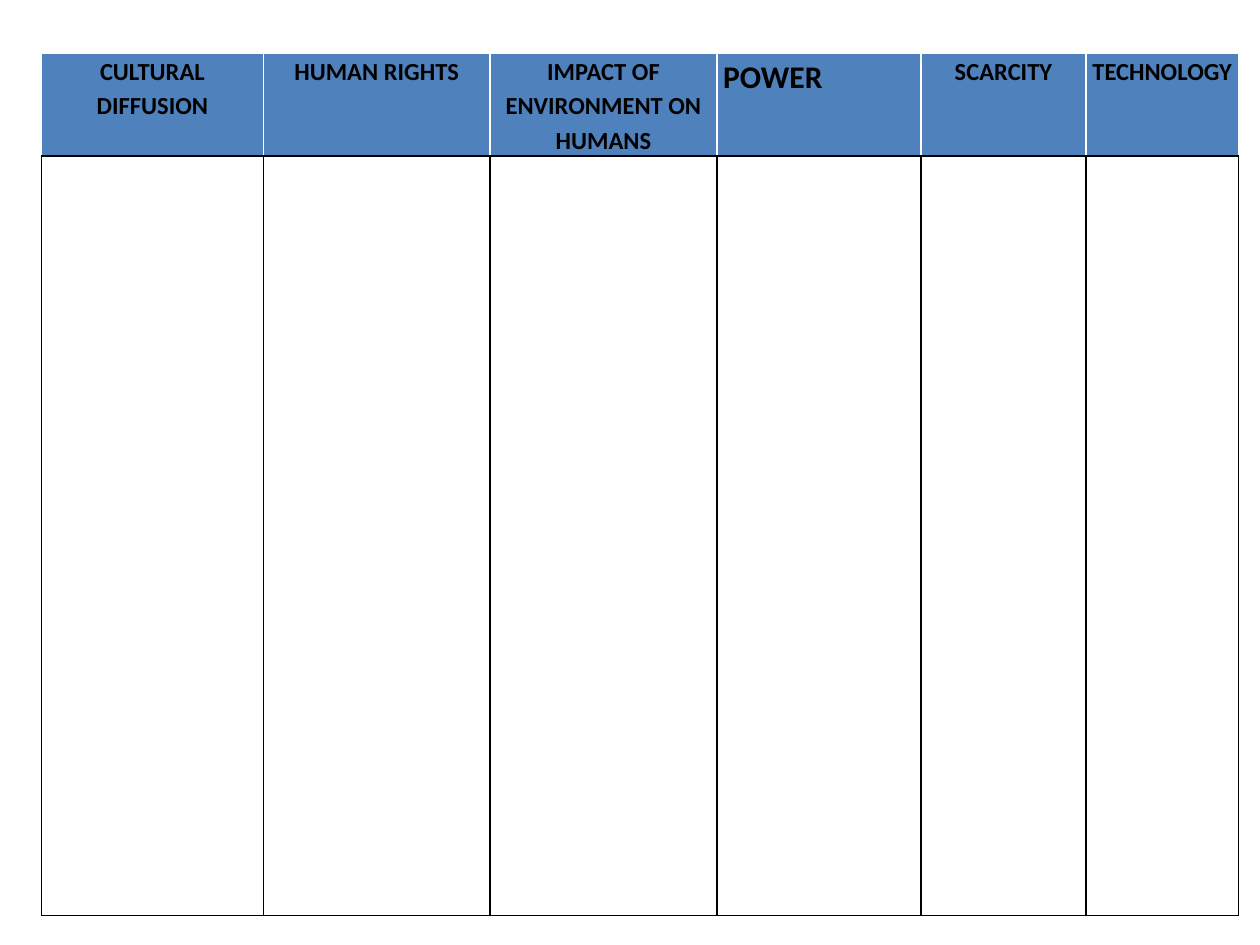
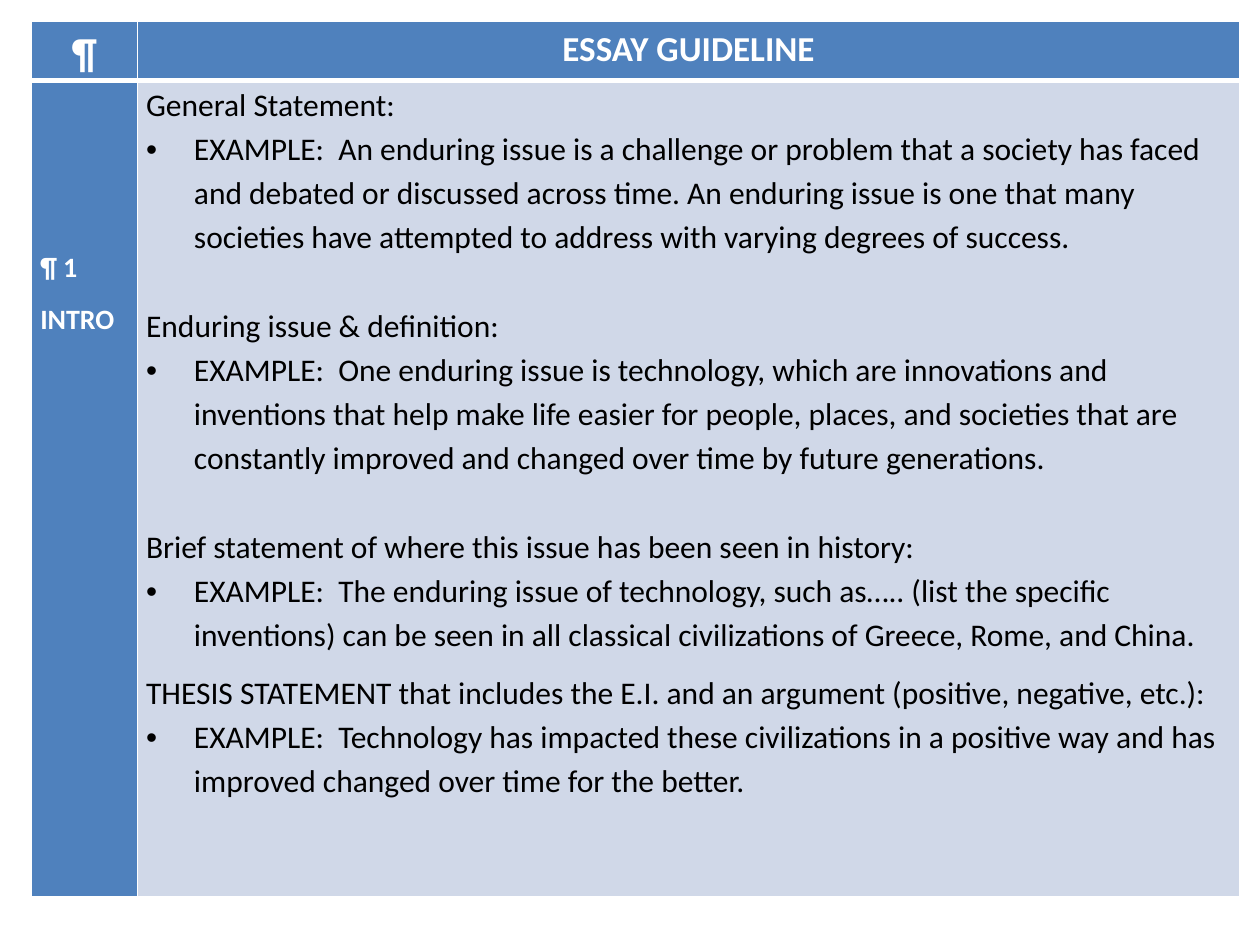
"""Builds two slides: an enduring-issues chart and an essay guideline."""
import pptx
import pptx.dml.color
import pptx.enum.text
import pptx.oxml.ns
import pptx.util
from lxml import etree

Inches = pptx.util.Inches
Pt = pptx.util.Pt
CENTER = pptx.enum.text.PP_ALIGN.CENTER

BLUE, PALE, WHITE, BLACK = "4F81BD", "D0D8E8", "FFFFFF", "000000"
FONT = "Calibri"
BULLET_INDENT = 0.38
SECTION_GAP = 25.3
INTRO_TOP = 1.22

ISSUES = ["CULTURAL DIFFUSION", "HUMAN RIGHTS", "IMPACT OF ENVIRONMENT ON HUMANS",
          "POWER", "SCARCITY", "TECHNOLOGY"]

INTRO_STEPS = [
    ("General Statement:",
     "An enduring issue is a challenge or problem that a society has faced and debated or "
     "discussed across time. An enduring issue is one that many societies have attempted to "
     "address with varying degrees of success."),
    ("Enduring issue & definition:",
     "One enduring issue is technology, which are innovations and inventions that help make "
     "life easier for people, places, and societies that are constantly improved and changed "
     "over time by future generations."),
    ("Brief statement of where this issue has been seen in history:",
     "The enduring issue of technology, such as….. (list the specific inventions) can be seen "
     "in all classical civilizations of Greece, Rome, and China."),
    ("THESIS STATEMENT that includes the E.I. and an argument (positive, negative, etc.):",
     "Technology has impacted these civilizations in a positive way and has improved changed "
     "over time for the better."),
]


def rgb(value):
    return pptx.dml.color.RGBColor.from_string(value)


class Deck:
    def __init__(self):
        self.prs = pptx.Presentation()
        self.prs.slide_width = Inches(10)
        self.prs.slide_height = Inches(7.5)
        self.slide = None

    def new_slide(self):
        self.slide = self.prs.slides.add_slide(self.prs.slide_layouts[6])

    def table(self, left, top, columns, rows):
        frame = self.slide.shapes.add_table(
            len(rows), len(columns), Inches(left), Inches(top),
            Inches(sum(columns)), Inches(sum(rows)))
        table = frame.table
        table.horz_banding = False
        for column, width in zip(table.columns, columns):
            column.width = Inches(width)
        for row, height in zip(table.rows, rows):
            row.height = Inches(height)
        return table

    def cell(self, cell, fill, side_margin, line=WHITE, top=None, bottom=None, top_margin=0):
        cell.margin_left = cell.margin_right = Inches(side_margin)
        cell.margin_top, cell.margin_bottom = Inches(top_margin), 0
        plain = (line, 1)
        borders = {"L": plain, "R": plain, "T": top or plain, "B": bottom or plain}
        properties = cell._tc.get_or_add_tcPr()
        for side, (color, width) in borders.items():
            edge = etree.SubElement(properties, pptx.oxml.ns.qn(f"a:ln{side}"), w=str(Pt(width)))
            solid = etree.SubElement(edge, pptx.oxml.ns.qn("a:solidFill"))
            etree.SubElement(solid, pptx.oxml.ns.qn("a:srgbClr"), val=color)
        cell.fill.solid()
        cell.fill.fore_color.rgb = rgb(fill)

    def paragraph(self, cell, text, size, color, bold=True, align=None, spacing=1.15,
                  before=0, after=0, bullet=False):
        frame = cell.text_frame
        paragraph = frame.paragraphs[0] if not cell.text else frame.add_paragraph()
        paragraph.alignment = align
        paragraph.line_spacing = spacing
        paragraph.space_before, paragraph.space_after = Pt(before), Pt(after)
        if bullet:
            properties = paragraph._p.get_or_add_pPr()
            properties.set("marL", str(Inches(BULLET_INDENT)))
            properties.set("indent", str(-Inches(BULLET_INDENT)))
            etree.SubElement(properties, pptx.oxml.ns.qn("a:buFont"), typeface="Arial")
            etree.SubElement(properties, pptx.oxml.ns.qn("a:buChar"), char="•")
        run = paragraph.add_run()
        run.text = text
        run.font.name, run.font.size, run.font.bold = FONT, Pt(size), bold
        run.font.color.rgb = rgb(color)


def issues_slide(deck):
    deck.new_slide()
    chart = deck.table(0.33, 0.42, [1.76, 1.8, 1.8, 1.62, 1.31, 1.21], [0.68, 6.03])
    for index, issue in enumerate(ISSUES):
        heading, answer = chart.cell(0, index), chart.cell(1, index)
        deck.cell(heading, BLUE, 0.05, bottom=(BLACK, 1))
        deck.cell(answer, WHITE, 0.05, line=BLACK)
        featured = issue == "POWER"
        deck.paragraph(heading, issue, 18 if featured else 14, BLACK,
                       align=None if featured else CENTER, after=10)


def guideline_slide(deck):
    deck.new_slide()
    guide = deck.table(0.25, 0.17, [0.84, 8.75], [0.44, 6.48])
    divider = (WHITE, 3)
    for index, (heading, size) in enumerate([("¶", 24), ("ESSAY GUIDELINE", 20)]):
        deck.cell(guide.cell(0, index), BLUE, 0.07, bottom=divider)
        deck.paragraph(guide.cell(0, index), heading, size, WHITE, align=CENTER)

    intro, steps = guide.cell(1, 0), guide.cell(1, 1)
    deck.cell(intro, BLUE, 0.07, top=divider, top_margin=INTRO_TOP)
    for label in ("¶ 1", "INTRO"):
        deck.paragraph(intro, label, 16, WHITE, spacing=1.5)

    deck.cell(steps, PALE, 0.07, top=divider)
    for index, (step, example) in enumerate(INTRO_STEPS):
        thesis = index == len(INTRO_STEPS) - 1
        deck.paragraph(steps, step, 18, BLACK, bold=False, spacing=1.5 if thesis else 1.15,
                       before=0 if thesis or index == 0 else SECTION_GAP)
        deck.paragraph(steps, f"EXAMPLE:  {example}", 18, BLACK, bold=False, bullet=True)


def main():
    deck = Deck()
    issues_slide(deck)
    guideline_slide(deck)
    deck.prs.save("out.pptx")


if __name__ == "__main__":
    main()
